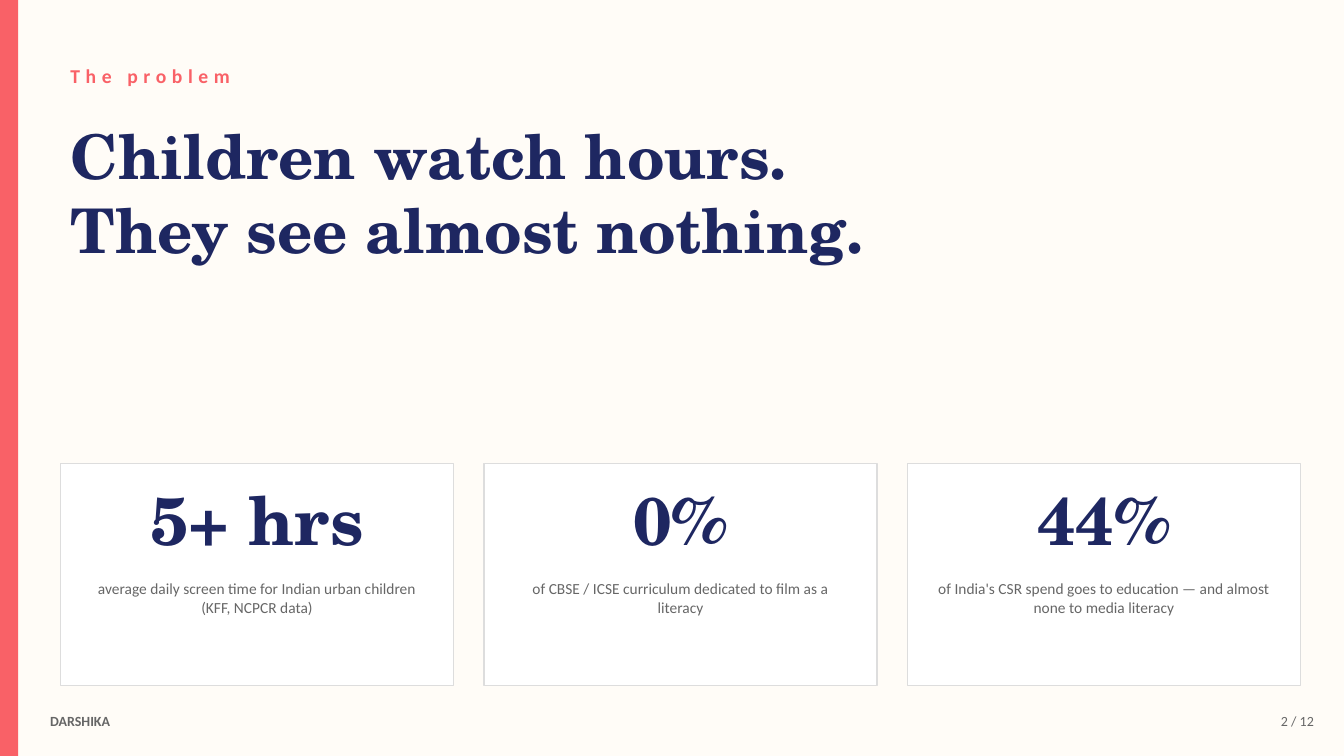
from pptx import Presentation
from pptx.dml.color import RGBColor
from pptx.enum.shapes import MSO_SHAPE
from pptx.enum.text import MSO_ANCHOR as Anchor, MSO_AUTO_SIZE as AutoSize, PP_ALIGN as Align
from pptx.util import Inches, Pt

CREAM = RGBColor(0xFF, 0xFC, 0xF7)
CORAL = RGBColor(0xF9, 0x61, 0x67)
NAVY = RGBColor(0x1E, 0x27, 0x61)
WHITE = RGBColor(0xFF, 0xFF, 0xFF)
BORDER = RGBColor(0xDD, 0xDD, 0xDD)
GREY = RGBColor(0x66, 0x66, 0x66)
SERIF, SANS = "TeX Gyre Schola", "Calibri"

MARGIN = 0.6
CARD_WIDTH, CARD_HEIGHT, CARD_GAP = 3.9, 2.2, 0.3
CARD_TOP = 4.6
FOOTER_TOP = 7
STATISTICS = [
    ("5+ hrs", "average daily screen time for Indian urban children (KFF, NCPCR data)"),
    ("0%", "of CBSE / ICSE curriculum dedicated to film as a literacy"),
    ("44%", "of India's CSR spend goes to education — and almost none to media literacy"),
]

presentation = Presentation()
presentation.slide_width, presentation.slide_height = Inches(13.33), Inches(7.5)
slide = presentation.slides.add_slide(presentation.slide_layouts[5])
slide.background.fill.solid()
slide.background.fill.fore_color.rgb = CREAM


def add_text(text, box, size, color, font=SANS, bold=False, align=Align.LEFT,
             anchor=Anchor.MIDDLE, spacing=None, shape=None):
    """Write one paragraph per line of text into shape, or into a new text box."""
    left, top, width, height = map(Inches, box)
    if shape is None:
        shape = slide.shapes.add_textbox(left, top, width, height)
    else:
        shape.left, shape.top, shape.width, shape.height = left, top, width, height
    frame = shape.text_frame
    frame.text = text
    frame.word_wrap = True
    frame.auto_size = AutoSize.NONE
    frame.vertical_anchor = anchor
    for paragraph in frame.paragraphs:
        paragraph.alignment = align
        run = paragraph.runs[0]
        run.font.name, run.font.size, run.font.bold = font, Pt(size), bold
        run.font.color.rgb = color
        if spacing:
            run.font._element.set("spc", str(spacing * 100))


def add_rectangle(box, fill, line=None):
    shape = slide.shapes.add_shape(MSO_SHAPE.RECTANGLE, *map(Inches, box))
    shape.shadow.inherit = False
    shape.fill.solid()
    shape.fill.fore_color.rgb = fill
    if line is None:
        shape.line.fill.background()
    else:
        shape.line.color.rgb = line
        shape.line.width = Pt(1)


add_rectangle((0, 0, 0.18, 7.5), CORAL)
add_text("The problem", (MARGIN, 0.5, 6, 0.5), 14, CORAL, bold=True, spacing=4)
add_text("Children watch hours.\nThey see almost nothing.", (MARGIN, 1, 8.5, 1.8),
         44, NAVY, font=SERIF, bold=True, shape=slide.shapes.title)

for column, (figure, caption) in enumerate(STATISTICS):
    left = MARGIN + column * (CARD_WIDTH + CARD_GAP)
    add_rectangle((left, CARD_TOP, CARD_WIDTH, CARD_HEIGHT), WHITE, line=BORDER)
    add_text(figure, (left, CARD_TOP + 0.1, CARD_WIDTH, 0.9), 48, NAVY,
             font=SERIF, bold=True, align=Align.CENTER)
    add_text(caption, (left + 0.2, CARD_TOP + 1.1, CARD_WIDTH - 0.4, 1), 11, GREY,
             align=Align.CENTER, anchor=Anchor.TOP)

add_text("2 / 12", (12.13, FOOTER_TOP, 1, 0.3), 10, GREY, align=Align.RIGHT)
add_text("DARSHIKA", (0.4, FOOTER_TOP, 2, 0.3), 10, GREY, bold=True)

presentation.save("out.pptx")
